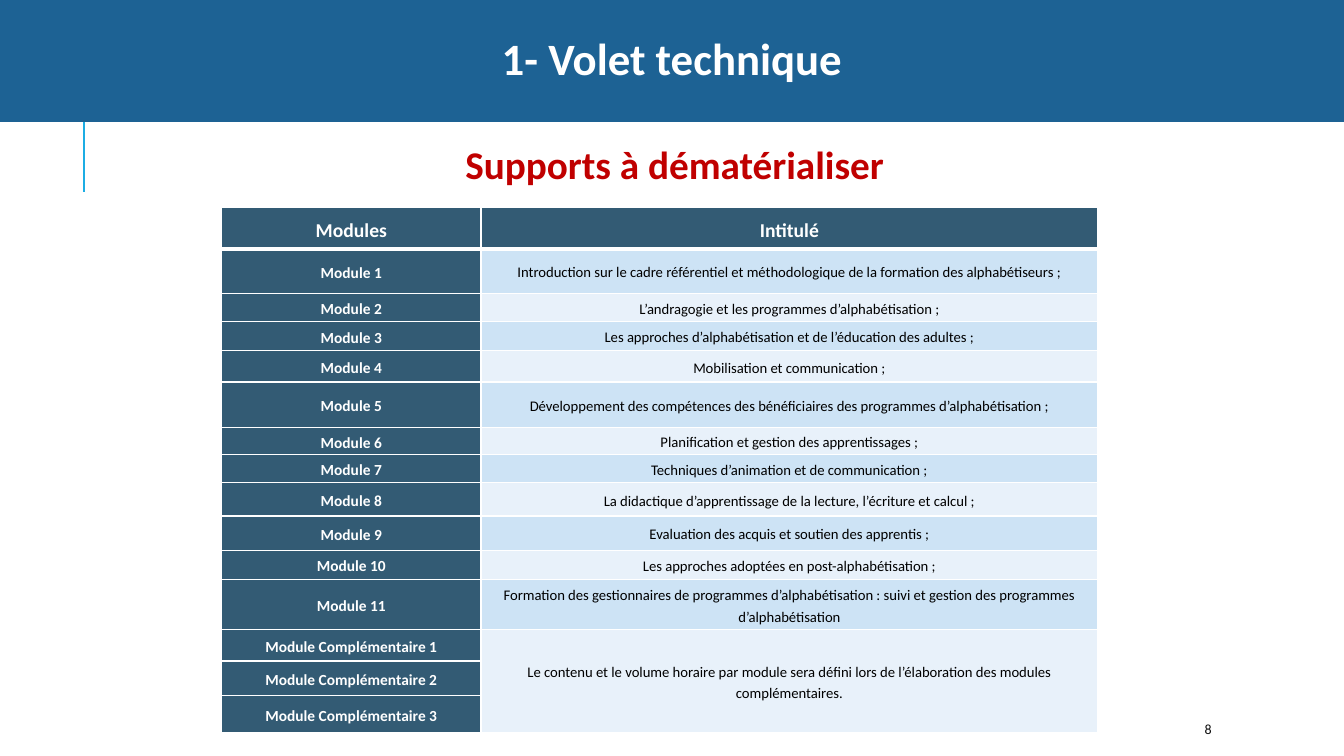
from lxml import etree
from pptx import Presentation
from pptx.dml.color import RGBColor
from pptx.enum.shapes import MSO_CONNECTOR, MSO_SHAPE
from pptx.enum.text import MSO_ANCHOR, PP_ALIGN
from pptx.oxml.ns import qn
from pptx.util import Inches, Pt

CENTER, LEFT = PP_ALIGN.CENTER, PP_ALIGN.LEFT
MIDDLE = MSO_ANCHOR.MIDDLE

TITLE = "1- Volet technique"
SUBTITLE = "Supports à dématérialiser"
PAGE = "8"
HEADERS = ("Modules", "Intitulé")
# (row height, module title)
MODULES = [
    (0.44, "Introduction sur le cadre référentiel et méthodologique de la formation des alphabétiseurs ;"),
    (0.28, "L’andragogie et les programmes d’alphabétisation ;"),
    (0.29, "Les approches d’alphabétisation et de l’éducation des adultes ;"),
    (0.31, "Mobilisation et communication ;"),
    (0.45, "Développement des compétences des bénéficiaires des programmes d’alphabétisation ;"),
    (0.27, "Planification et gestion des apprentissages ;"),
    (0.28, "Techniques d’animation et de communication ;"),
    (0.33, "La didactique d’apprentissage de la lecture, l’écriture et calcul ;"),
    (0.34, "Evaluation des acquis et soutien des apprentis ;"),
    (0.29, "Les approches adoptées en post-alphabétisation ;"),
    (0.5, "Formation des gestionnaires de programmes d’alphabétisation : "
          "suivi et gestion des programmes d’alphabétisation"),
]
EXTRA_HEIGHTS = (0.31, 0.34, 0.37)
EXTRA_TEXT = ("Le contenu et le volume horaire par module sera défini lors de "
              "l’élaboration des modules complémentaires.")
HEADER_HEIGHT = 0.41
COL_WIDTHS = (2.57, 6.12)

WHITE, BLACK, RED = "FFFFFF", "000000", "C00000"
BANNER, ACCENT, DARK = "1D6294", "1CADE4", "335B74"
BANDS = ("CDE3F5", "E8F1FA")


def rgb(value):
    return RGBColor.from_string(value)


def write(tf, text, size, color, bold=False, align=CENTER, spacing=None):
    tf.text = text
    tf.word_wrap = True
    tf.vertical_anchor = MIDDLE
    p = tf.paragraphs[0]
    p.alignment = align
    if spacing:
        p.line_spacing = spacing
    font = p.runs[0].font
    font.name, font.size, font.bold = "Calibri", Pt(size), bold
    font.color.rgb = rgb(color)
    return p.runs[0]


def add_effects(parent, shadow=False):
    """Append an effect list, empty or with a soft text shadow."""
    effects = etree.SubElement(parent, qn("a:effectLst"))
    if shadow:
        outer = etree.SubElement(effects, qn("a:outerShdw"), blurRad="50800",
                                 dist="38100", dir="5400000", algn="t", rotWithShape="0")
        color = etree.SubElement(outer, qn("a:srgbClr"), val=BLACK)
        etree.SubElement(color, qn("a:alpha"), val="60000")
    return effects


def set_borders(cell, top, bottom):
    tcPr = cell._tc.get_or_add_tcPr()
    for i, (side, width) in enumerate(zip("LRTB", (1, 1, top, bottom))):
        ln = etree.Element(qn("a:ln" + side), w=str(Pt(width)))
        fill = etree.SubElement(ln, qn("a:solidFill"))
        etree.SubElement(fill, qn("a:srgbClr"), val=WHITE)
        tcPr.insert(i, ln)


def fill_cell(cell, fill, text="", size=11, color=WHITE, bold=True, top=1, bottom=1):
    cell.fill.solid()
    cell.fill.fore_color.rgb = rgb(fill)
    cell.margin_left = cell.margin_right = Inches(0.06)
    cell.margin_top = cell.margin_bottom = 0
    cell.vertical_anchor = MIDDLE
    set_borders(cell, top, bottom)
    if text:
        write(cell.text_frame, text, size, color, bold, spacing=1.2)


prs = Presentation()
prs.slide_width, prs.slide_height = Inches(13.33), Inches(7.5)
s = prs.slides.add_slide(prs.slide_layouts[5])

# Title banner
title = s.shapes.title
title.left, title.top = 0, 0
title.width, title.height = prs.slide_width, Inches(1.21)
title.fill.solid()
title.fill.fore_color.rgb = rgb(BANNER)
write(title.text_frame, TITLE, 32, WHITE, True, spacing=0.9)

# Accent line, behind the banner
line = s.shapes.add_connector(MSO_CONNECTOR.STRAIGHT, Inches(0.83), Inches(1.9),
                              Inches(0.83), Inches(0.9))
line.line.color.rgb = rgb(ACCENT)
line.line.width = Pt(1.5)
add_effects(line._element.spPr)
title._element.addprevious(line._element)

# Page number
page = s.shapes.add_textbox(Inches(11.85), Inches(7.08), Inches(1.06), Inches(0.3))
write(page.text_frame, PAGE, 10, "0D0D0D", align=LEFT)

# Subtitle
subtitle = s.shapes.add_shape(MSO_SHAPE.CHEVRON, Inches(2.2), Inches(1.35),
                              Inches(8.98), Inches(0.55))
subtitle.shadow.inherit = False
subtitle.fill.background()
subtitle.line.fill.background()
run = write(subtitle.text_frame, SUBTITLE, 28, RED, True)
rPr = run._r.get_or_add_rPr()
rPr.find(qn("a:solidFill")).addnext(add_effects(rPr, shadow=True))

# Module table
heights = [HEADER_HEIGHT, *(h for h, _ in MODULES), *EXTRA_HEIGHTS]
labels = [f"Module {i + 1}" for i in range(len(MODULES))]
labels += [f"Module Complémentaire {i + 1}" for i in range(len(EXTRA_HEIGHTS))]
texts = [text for _, text in MODULES] + [EXTRA_TEXT]

table = s.shapes.add_table(len(heights), len(COL_WIDTHS), Inches(2.2), Inches(2.06),
                           Inches(sum(COL_WIDTHS)), Inches(sum(heights))).table
for col, width in zip(table.columns, COL_WIDTHS):
    col.width = Inches(width)
for row, height in zip(table.rows, heights):
    row.height = Inches(height)

for c, header in enumerate(HEADERS):
    fill_cell(table.cell(0, c), DARK, header, size=14, bottom=3)
for i, label in enumerate(labels):
    top = 3 if i == 0 else 1
    text = texts[i] if i < len(texts) else ""
    band = BANDS[min(i, len(MODULES)) % 2]
    fill_cell(table.cell(i + 1, 0), DARK, label, top=top)
    fill_cell(table.cell(i + 1, 1), band, text, 10.5, BLACK, False, top=top)
table.cell(len(texts), 1).merge(table.cell(len(labels), 1))

prs.save("out.pptx")
